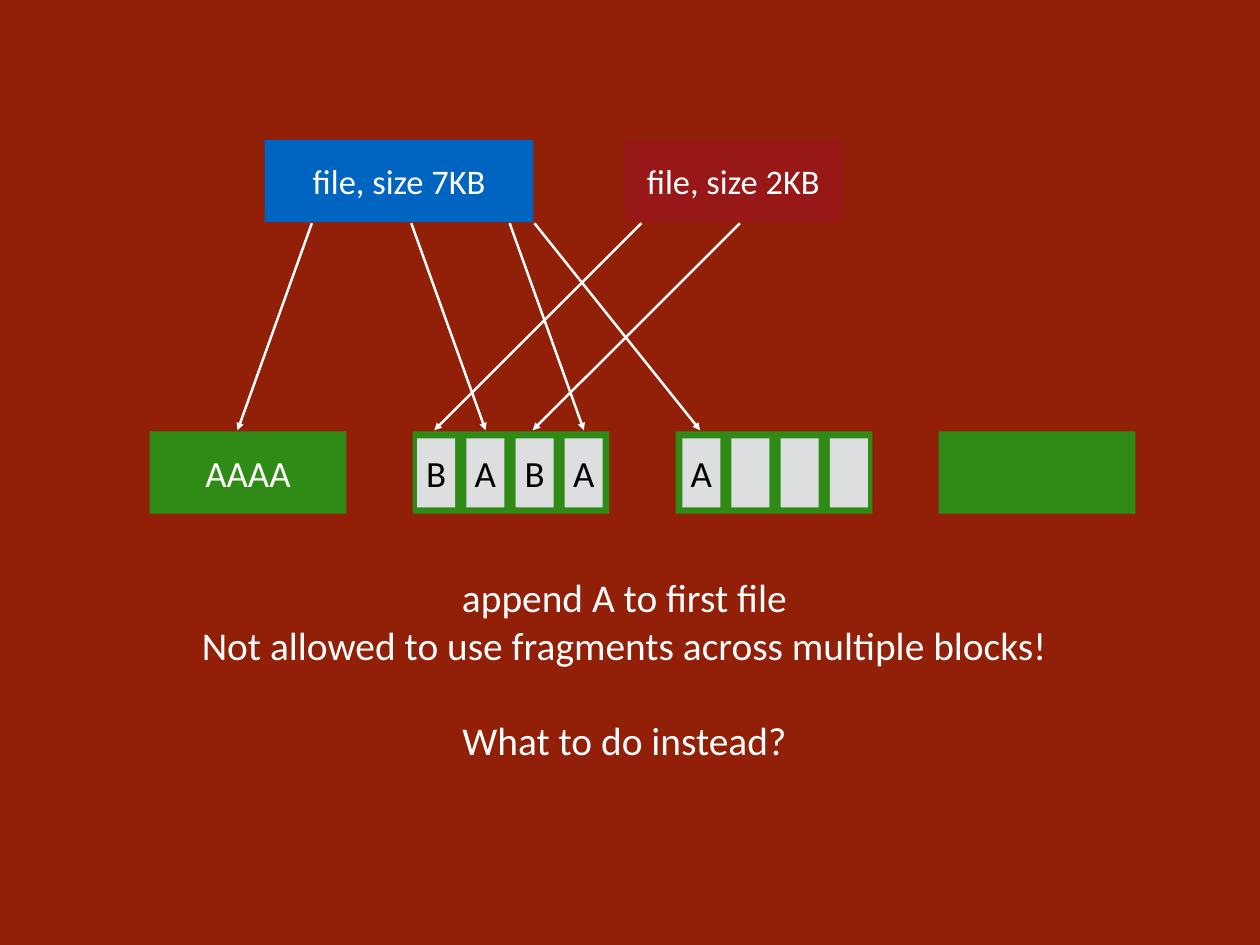
"""Build a slide on how two files share disk blocks and fragments."""
from dataclasses import dataclass

from lxml.etree import SubElement
from pptx import Presentation
from pptx.dml.color import RGBColor
from pptx.enum.shapes import MSO_CONNECTOR, MSO_SHAPE
from pptx.enum.text import MSO_ANCHOR, MSO_AUTO_SIZE, PP_ALIGN
from pptx.oxml.ns import qn
from pptx.slide import Slide
from pptx.text.text import TextFrame
from pptx.util import Cm, Pt


@dataclass(frozen=True)
class Theme:
    font: str = "Calibri"
    background: str = "921F07"
    block: str = "308B16"
    fragment: str = "DCDEE0"
    first_file: str = "0065C1"
    second_file: str = "971817"
    light: str = "FFFFFF"
    dark: str = "000000"
    file_size: int = 28
    block_size: int = 30
    note_size: int = 32
    blank_line: int = 39
    line_width: int = 2


@dataclass(frozen=True)
class Box:
    left: float
    top: float
    width: float
    height: float
    fill: str
    text: str
    size: int
    color: str


@dataclass(frozen=True)
class Arrow:
    start_x: float
    end_x: float


@dataclass(frozen=True)
class Line:
    text: str
    space_before: int = 0


THEME = Theme()
BLOCK_LEFT, BLOCK_TOP, BLOCK_PITCH = 4.29, 12.37, 7.54
BLOCK_WIDTH, BOX_HEIGHT = 5.64, 2.36
FRAGMENT_TOP, FRAGMENT_PITCH = 12.57, 1.41
FRAGMENT_WIDTH, FRAGMENT_HEIGHT = 1.09, 1.98
FILE_TOP = 4.01
ARROW_TOP, ARROW_BOTTOM = 6.4, 12.34

FILES = [
    Box(7.59, FILE_TOP, 7.7, BOX_HEIGHT, THEME.first_file,
        "file, size 7KB", THEME.file_size, THEME.light),
    Box(17.91, FILE_TOP, 6.22, BOX_HEIGHT, THEME.second_file,
        "file, size 2KB", THEME.file_size, THEME.light),
]
BLOCKS = [
    Box(BLOCK_LEFT + i * BLOCK_PITCH, BLOCK_TOP, BLOCK_WIDTH, BOX_HEIGHT,
        THEME.block, text, THEME.block_size, THEME.light)
    for i, text in enumerate(["AAAA", "", "", ""])
]
FRAGMENTS = [
    Box(left + i * FRAGMENT_PITCH, FRAGMENT_TOP, FRAGMENT_WIDTH, FRAGMENT_HEIGHT,
        THEME.fragment, text, THEME.block_size, THEME.dark)
    for left, texts in [(11.96, ["B", "A", "B", "A"]), (19.56, ["A", "", "", ""])]
    for i, text in enumerate(texts)
]
ARROWS = [
    Arrow(8.94, 6.81),
    Arrow(11.79, 13.92),
    Arrow(14.61, 16.74),
    Arrow(15.32, 20.07),
    Arrow(18.39, 12.45),
    Arrow(21.21, 15.27),
]
NOTES = [
    Line("append A to first file"),
    Line("Not allowed to use fragments across multiple blocks!"),
    Line("What to do instead?", THEME.blank_line),
]


def set_margins(tf: TextFrame, margin: float) -> None:
    tf.margin_left = tf.margin_right = tf.margin_top = tf.margin_bottom = Cm(margin)
    tf.vertical_anchor = MSO_ANCHOR.MIDDLE


def add_line(tf: TextFrame, line: Line, size: int, color: str, first: bool = True) -> None:
    p = tf.paragraphs[0] if first else tf.add_paragraph()
    p.alignment = PP_ALIGN.CENTER
    p.space_before = Pt(line.space_before)
    r = p.add_run()
    r.text = line.text
    r.font.name = THEME.font
    r.font.size = Pt(size)
    r.font.color.rgb = RGBColor.from_string(color)


def add_box(s: Slide, box: Box) -> None:
    sp = s.shapes.add_shape(MSO_SHAPE.RECTANGLE, Cm(box.left), Cm(box.top),
                            Cm(box.width), Cm(box.height))
    sp.shadow.inherit = False
    sp.fill.solid()
    sp.fill.fore_color.rgb = RGBColor.from_string(box.fill)
    sp.line.fill.background()
    if box.text:
        set_margins(sp.text_frame, 0)
        add_line(sp.text_frame, Line(box.text), box.size, box.color)


def add_arrow(s: Slide, arrow: Arrow) -> None:
    cxn = s.shapes.add_connector(MSO_CONNECTOR.STRAIGHT, Cm(arrow.start_x), Cm(ARROW_TOP),
                                 Cm(arrow.end_x), Cm(ARROW_BOTTOM))
    cxn.line.color.rgb = RGBColor.from_string(THEME.light)
    cxn.line.width = Pt(THEME.line_width)
    SubElement(cxn.line._get_or_add_ln(), qn("a:tailEnd"), type="triangle")
    SubElement(cxn._element.spPr, qn("a:effectLst"))


def add_notes(s: Slide, lines: list[Line]) -> None:
    tf = s.shapes.add_textbox(Cm(5.08), Cm(16.28), Cm(25.65), Cm(5.77)).text_frame
    tf.word_wrap = False
    tf.auto_size = MSO_AUTO_SIZE.SHAPE_TO_FIT_TEXT
    set_margins(tf, 0.15)
    for i, line in enumerate(lines):
        add_line(tf, line, THEME.note_size, THEME.light, first=i == 0)


def main() -> None:
    prs = Presentation()
    prs.slide_width, prs.slide_height = Cm(36.12), Cm(27.1)
    s = prs.slides.add_slide(prs.slide_layouts.get_by_name("Blank"))
    s.background.fill.solid()
    s.background.fill.fore_color.rgb = RGBColor.from_string(THEME.background)
    for box in BLOCKS + FILES + FRAGMENTS:
        add_box(s, box)
    for arrow in ARROWS:
        add_arrow(s, arrow)
    add_notes(s, NOTES)
    prs.save("out.pptx")


if __name__ == "__main__":
    main()
